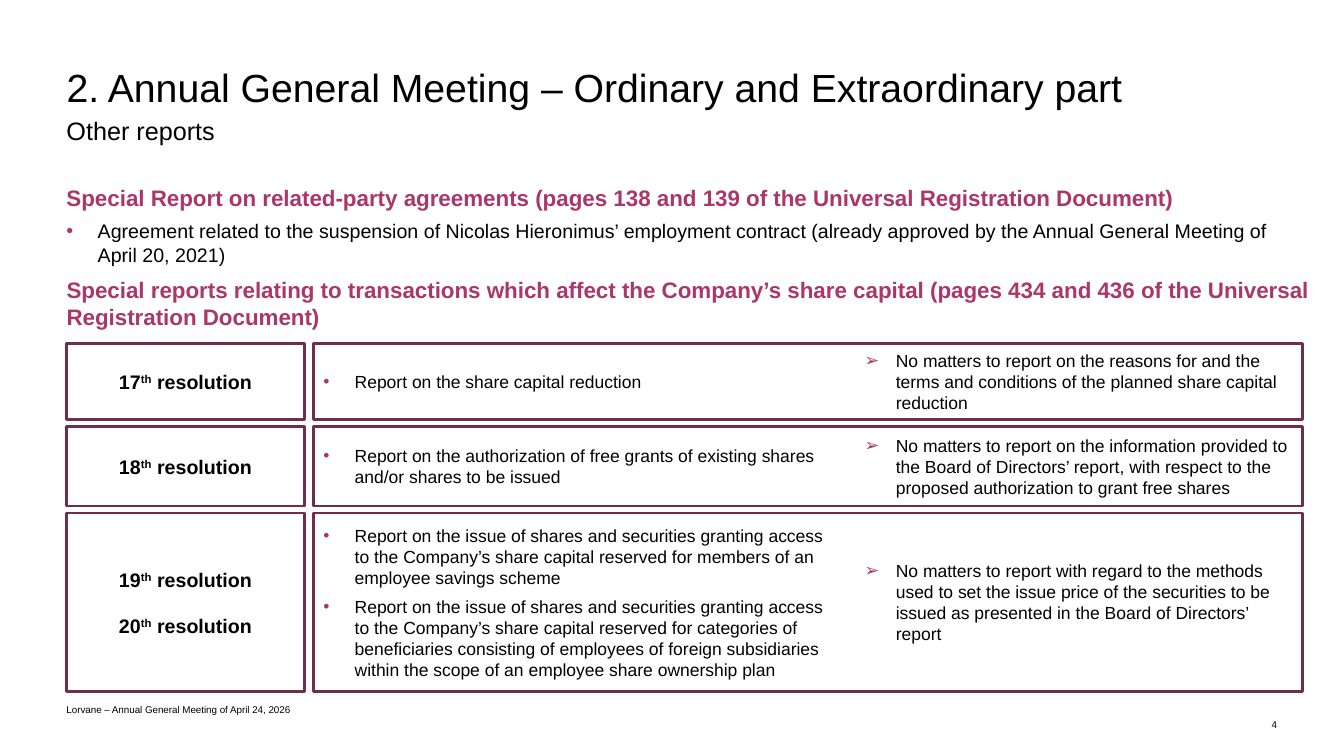
import pptx
import pptx.util
import pptx.dml.color
import pptx.enum.shapes
import pptx.enum.text
import pptx.oxml
import pptx.oxml.ns

Pt = pptx.util.Pt
ALIGN = pptx.enum.text.PP_ALIGN
ANCHOR = pptx.enum.text.MSO_ANCHOR
RECT = pptx.enum.shapes.MSO_SHAPE.RECTANGLE

COLORS = {"ink": "000000", "rose": "AA3769", "plum": "702E4F"}
LEFT, GAP = 47.5, 5
LABEL = 170
REPORT, FINDING = 224, 610.5

HEAD = {"size": 16, "bold": True, "color": "rose"}
BODY = {"size": 14, "bullet": "•", "before": 6}
TIGHT = {"line_spacing": 0.85}


def rgb(name):
    return pptx.dml.color.RGBColor.from_string(COLORS[name])


class Deck:
    """Holds the style and the current slide."""

    font = "Arial"
    line = 2
    indent = 22.3

    def __init__(self, width, height):
        self.prs = pptx.Presentation()
        self.prs.slide_width, self.prs.slide_height = Pt(width), Pt(height)
        self.slide = self.prs.slides.add_slide(self.prs.slide_layouts[6])

    def bullet(self, par, mark):
        props = par._p.get_or_add_pPr()
        props.set("marL", str(Pt(self.indent)))
        props.set("indent", str(-Pt(self.indent)))
        space = pptx.oxml.ns.nsdecls("a")
        for xml in (
            f'<a:buClr {space}><a:srgbClr val="{COLORS["rose"]}"/></a:buClr>',
            f'<a:buFont {space} typeface="{self.font}"/>',
            f'<a:buChar {space} char="{mark}"/>',
        ):
            props.append(pptx.oxml.parse_xml(xml))

    def fill(self, frame, items, anchor):
        """Write (text, format) items; text between ^ marks is raised."""
        frame.word_wrap = True
        frame.vertical_anchor = anchor
        for i, (text, style) in enumerate(items):
            par = frame.add_paragraph() if i else frame.paragraphs[0]
            style = dict(style)
            size = style.pop("size")
            bold = style.pop("bold", False)
            color = style.pop("color", "ink")
            mark = style.pop("bullet", None)
            before = style.pop("before", 0)
            if mark:
                self.bullet(par, mark)
            if i:
                style["space_before"] = Pt(before)
            for key, value in style.items():
                setattr(par, key, value)
            for j, part in enumerate(text.split("^")):
                run = par.add_run()
                run.text = part
                looks = {"name": self.font, "size": Pt(size), "bold": bold}
                for key, value in looks.items():
                    setattr(run.font, key, value)
                run.font.color.rgb = rgb(color)
                if j % 2:
                    run._r.get_or_add_rPr().set("baseline", "30000")

    def text(self, box, items, anchor=ANCHOR.TOP, inset=True):
        shape = self.slide.shapes.add_textbox(*map(Pt, box))
        if not inset:
            for side in ("left", "top", "right", "bottom"):
                setattr(shape.text_frame, f"margin_{side}", 0)
        self.fill(shape.text_frame, items, anchor)

    def frame(self, box, items=()):
        shape = self.slide.shapes.add_shape(RECT, *map(Pt, box))
        shape.shadow.inherit = False
        shape.fill.background()
        shape.line.color.rgb = rgb("plum")
        shape.line.width = Pt(self.line)
        if items:
            self.fill(shape.text_frame, items, ANCHOR.MIDDLE)


ROWS = [
    (54, ["17^th^ resolution"],
     ["Report on the share capital reduction"],
     "No matters to report on the reasons for and the terms and conditions "
     "of the planned share capital reduction"),
    (57, ["18^th^ resolution"],
     ["Report on the authorization of free grants of existing shares and/or "
      "shares to be issued"],
     "No matters to report on the information provided to the Board of "
     "Directors’ report, with respect to the proposed authorization to grant "
     "free shares"),
    (127.5, ["19^th^ resolution", "20^th^ resolution"],
     ["Report on the issue of shares and securities granting access to the "
      "Company’s share capital reserved for members of an employee savings "
      "scheme",
      "Report on the issue of shares and securities granting access to the "
      "Company’s share capital reserved for categories of beneficiaries "
      "consisting of employees of foreign subsidiaries within the scope of "
      "an employee share ownership plan"],
     "No matters to report with regard to the methods used to set the issue "
     "price of the securities to be issued as presented in the Board of "
     "Directors’ report"),
]


def main():
    deck = Deck(960, 540)

    # Title and subtitle
    deck.text((LEFT, 50.4, 795.6, 36), [
        ("2. Annual General Meeting – Ordinary and Extraordinary part",
         {"size": 28, **TIGHT})], inset=False)
    deck.text((LEFT, 85.7, 648, 23), [
        ("Other reports", {"size": 18, **TIGHT})], inset=False)

    # Special reports
    deck.text((LEFT, 117.4, 864, 72.7), [
        ("Special Report on related-party agreements (pages 138 and 139 of "
         "the Universal Registration Document)", HEAD),
        ("Agreement related to the suspension of Nicolas Hieronimus’ "
         "employment contract (already approved by the Annual General "
         "Meeting of April 20, 2021)", BODY)], ANCHOR.BOTTOM, False)
    deck.text((LEFT, 197.3, 891.4, 40), [
        ("Special reports relating to transactions which affect the "
         "Company’s share capital (pages 434 and 436 of the Universal "
         "Registration Document)", HEAD)], inset=False)

    # Resolution rows
    label = {"size": 14, "bold": True, "alignment": ALIGN.CENTER, "before": 16}
    report = {"size": 12.5, "bullet": "•", "before": 6}
    finding = {"size": 12.5, "bullet": "➢"}
    top = 245.5
    for height, names, reports, result in ROWS:
        deck.frame((LEFT, top, LABEL, height), [(n, label) for n in names])
        deck.frame((REPORT, top, 706.5, height))
        deck.text((REPORT, top, 380, height),
                  [(r, report) for r in reports], ANCHOR.MIDDLE)
        deck.text((FINDING, top, 320.4, height),
                  [(result, finding)], ANCHOR.MIDDLE)
        top += height + GAP

    # Footer and page number
    deck.text((LEFT, 500.4, 418, 10.8), [
        ("Lorvane – Annual General Meeting of April 24, 2026", {"size": 7})],
        ANCHOR.BOTTOM, False)
    deck.text((811.4, 511.2, 100.8, 10.8), [
        ("4", {"size": 7, "alignment": ALIGN.RIGHT})], ANCHOR.BOTTOM, False)

    deck.prs.save("out.pptx")


if __name__ == "__main__":
    main()
